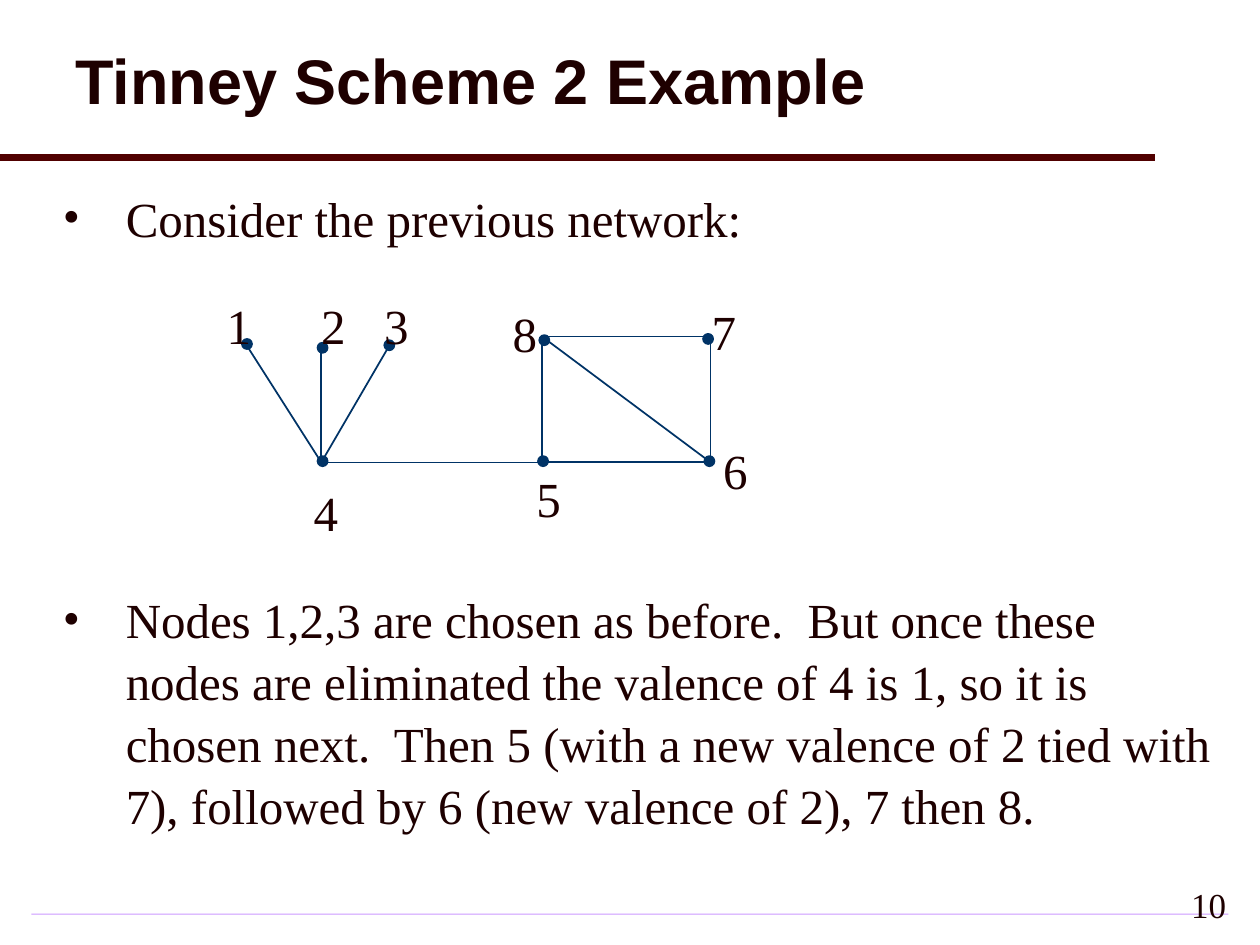
from dataclasses import dataclass

from lxml import etree
from pptx import Presentation
from pptx.dml.color import RGBColor
from pptx.enum.shapes import MSO_CONNECTOR, MSO_SHAPE
from pptx.enum.text import MSO_ANCHOR, PP_ALIGN
from pptx.oxml.ns import qn
from pptx.util import Emu, Pt

STRAIGHT = MSO_CONNECTOR.STRAIGHT
RECT, OVAL = MSO_SHAPE.RECTANGLE, MSO_SHAPE.OVAL
MIDDLE, TOP = MSO_ANCHOR.MIDDLE, MSO_ANCHOR.TOP
LEFT, RIGHT = PP_ALIGN.LEFT, PP_ALIGN.RIGHT
SCALE = 9144  # EMU in one px, 100 px to the inch


@dataclass(frozen=True)
class Theme:
    ink: RGBColor = RGBColor(0x1E, 0x00, 0x00)
    rule: RGBColor = RGBColor(0x50, 0x00, 0x00)
    footer: RGBColor = RGBColor(0xCC, 0x99, 0xFF)
    network: RGBColor = RGBColor(0x00, 0x33, 0x66)
    white: RGBColor = RGBColor(0xFF, 0xFF, 0xFF)
    head_font: str = "Arial"
    body_font: str = "Times New Roman"
    title_size: int = 36
    body_size: int = 28
    number_size: int = 20
    leading: float = 1.05


THEME = Theme()

# Network, relative to its box: dot corner, label corner
DOT = 8
NODES = {
    "1": ((22, 42), (0, 0)),
    "2": ((82, 45), (75, 0)),
    "3": ((135, 43), (125, 0)),
    "4": ((82, 135), (69, 149)),
    "5": ((257, 135), (246, 138)),
    "6": ((389, 135), (394, 115)),
    "7": ((388, 38), (385, 5)),
    "8": ((258, 39), (227, 7)),
}
HUB, CORNER = (85, 140), (394, 140)
SQUARE = (260, 40, 134, 100)
EDGES = [(HUB, (27, 49)), (HUB, (85, 49)), (HUB, (138, 49)),
         (HUB, CORNER), (SQUARE[:2], CORNER)]


def px(*values):
    return [Emu(v * SCALE) for v in values]


def add_line(s, start, end, color, width):
    line = s.shapes.add_connector(STRAIGHT, *px(*start, *end))
    line.line.color.rgb = color
    line.line.width = Pt(width)
    etree.SubElement(line._element.spPr, qn("a:effectLst"))


def add_shape(s, kind, box, fill, outline=None):
    sp = s.shapes.add_shape(kind, *px(*box))
    sp.shadow.inherit = False
    sp.fill.solid()
    sp.fill.fore_color.rgb = fill
    if outline is None:
        sp.line.fill.background()
    else:
        sp.line.color.rgb = outline
        sp.line.width = Pt(1)


def add_text(s, box, text, size, wrap=True, align=LEFT, anchor=TOP):
    tf = s.shapes.add_textbox(*px(*box)).text_frame
    tf.word_wrap = wrap
    tf.vertical_anchor = anchor
    tf.text = text
    p = tf.paragraphs[0]
    p.alignment = align
    p.line_spacing = THEME.leading
    style(p.runs[0].font, THEME.body_font, size)
    return p


def style(font, name, size, bold=False):
    font.name = name
    font.size = Pt(size)
    font.bold = bold
    font.color.rgb = THEME.ink


def add_bullet(s, box, text):
    p = add_text(s, box, text, THEME.body_size)
    pPr = p._p.get_or_add_pPr()
    indent, = px(50)
    pPr.set("marL", str(indent))
    pPr.set("indent", str(-indent))
    etree.SubElement(pPr, qn("a:buFont"), typeface=THEME.body_font)
    etree.SubElement(pPr, qn("a:buChar"), char="•")


def add_header(s, box, text):
    title = s.shapes.title
    title.left, title.top, title.width, title.height = px(*box)
    tf = title.text_frame
    tf.text = text
    tf.vertical_anchor = MIDDLE
    p = tf.paragraphs[0]
    p.alignment = LEFT
    p.line_spacing = 0.9
    style(p.runs[0].font, THEME.head_font, THEME.title_size, True)
    bottom = box[1] + box[3]
    add_line(s, (0, bottom), (917, bottom), THEME.rule, 4)


def add_network(s, left, top):
    def at(point):
        return left + point[0], top + point[1]

    # Square of nodes 5 to 8, then the other edges
    add_shape(s, RECT, at(SQUARE) + SQUARE[2:], THEME.white, THEME.network)
    for start, end in EDGES:
        add_line(s, at(start), at(end), THEME.network, 1)
    # Dots and their numbers
    for name, (dot, label) in NODES.items():
        add_shape(s, OVAL, at(dot) + (DOT, DOT), THEME.network, THEME.network)
        add_text(s, at(label) + (40, 57), name, THEME.body_size, wrap=False)


def add_footer(s, box, number):
    left, top, width, height = box
    add_shape(s, RECT, (left, top + 33, width, 1), THEME.footer)
    add_text(s, (left + 750, top, 208, height), number, THEME.number_size,
             align=RIGHT, anchor=MIDDLE)


def main():
    prs = Presentation()
    prs.slide_width, prs.slide_height = px(1000, 750)
    s = prs.slides.add_slide(prs.slide_layouts[5])
    add_header(s, (50, 8, 875, 117), "Tinney Scheme 2 Example")
    add_bullet(s, (40, 142, 934, 57), "Consider the previous network:")
    add_network(s, 170, 227)
    add_bullet(s, (40, 461, 934, 198),
               "Nodes 1,2,3 are chosen as before.  But once these nodes are "
               "eliminated the valence of 4 is 1, so it is chosen next.  "
               "Then 5 (with a new valence of 2 tied with 7), followed by 6 "
               "(new valence of 2), 7 then 8.")
    add_footer(s, (25, 692, 950, 50), "10")
    prs.save("out.pptx")


if __name__ == "__main__":
    main()
